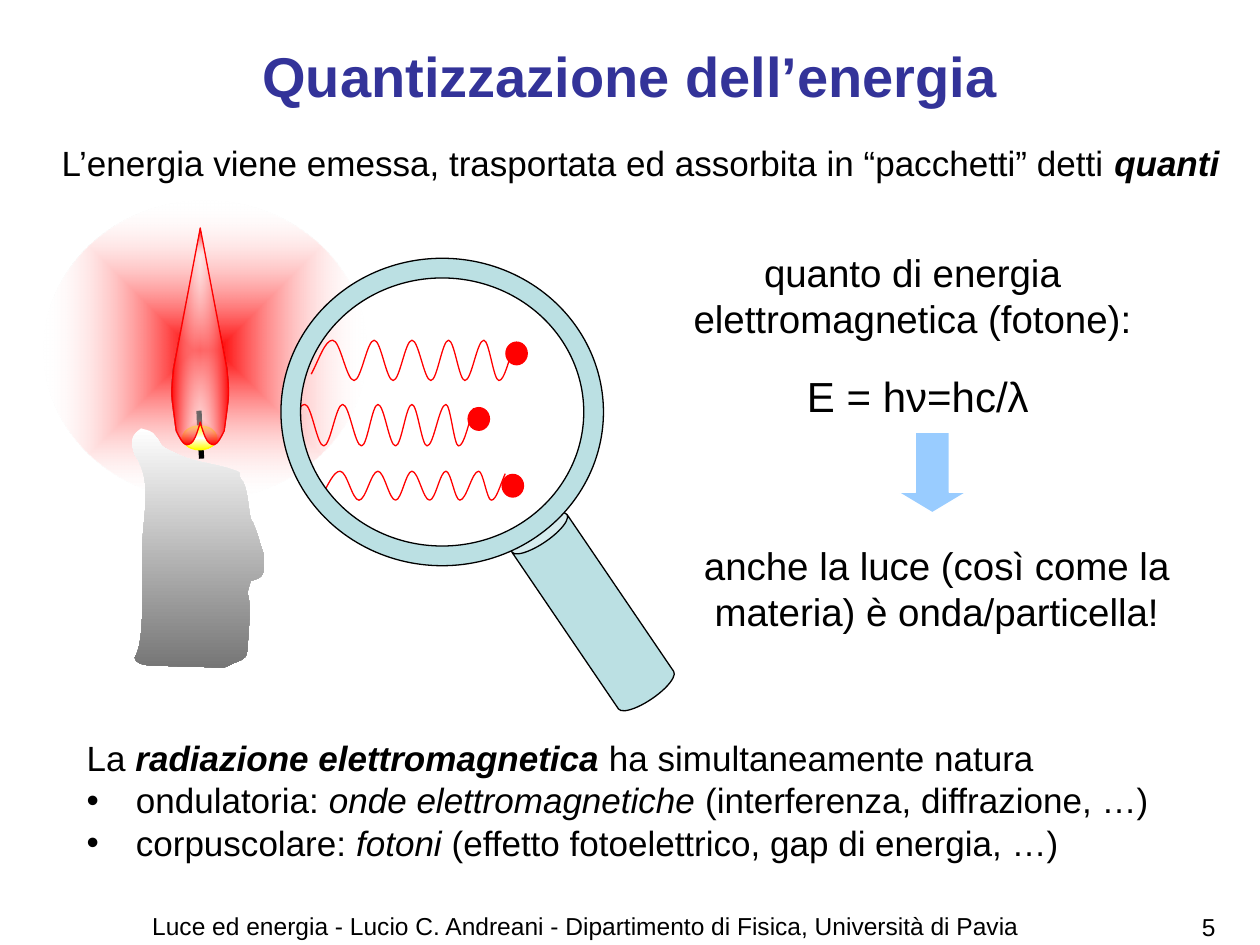
from pptx import Presentation
from pptx.dml.color import RGBColor
from pptx.enum.shapes import MSO_SHAPE
from pptx.enum.text import MSO_ANCHOR, PP_ALIGN
from pptx.oxml import parse_xml
from pptx.oxml.ns import nsdecls, qn
from pptx.oxml.xmlchemy import OxmlElement
from pptx.util import Pt

PX = 9144  # EMU per px, 100 px to the inch

BLACK = RGBColor(0x00, 0x00, 0x00)
WHITE = RGBColor(0xFF, 0xFF, 0xFF)
RED = RGBColor(0xFF, 0x00, 0x00)
YELLOW = RGBColor(0xFF, 0xFF, 0x00)
GRAY = RGBColor(0x76, 0x76, 0x76)
TEAL = RGBColor(0xBB, 0xE0, 0xE3)
SKY = RGBColor(0x99, 0xCC, 0xFF)
INDIGO = RGBColor(0x33, 0x33, 0x99)

RADIAL = ('<a:path path="shape"><a:fillToRect l="50000" t="50000" '
          'r="50000" b="50000"/></a:path>')
DOWNWARD = '<a:lin ang="5400000" scaled="0"/>'


class SlideBuilder:
    font = "Arial"

    def __init__(self, prs):
        self.s = prs.slides.add_slide(prs.slide_layouts[6])

    def paint(self, sp, fill=None, line=None, width=0.75):
        sp.shadow.inherit = False
        if fill is None:
            sp.fill.background()
        else:
            sp.fill.solid()
            sp.fill.fore_color.rgb = fill
        if line is None:
            sp.line.fill.background()
        else:
            sp.line.color.rgb = line
            sp.line.width = Pt(width)
        return sp

    def gradient(self, sp, start, end, direction, start_alpha=100, end_alpha=100):
        """Replace the fill by two stops; alpha is in percent."""
        stops = "".join(
            f'<a:gs pos="{pos}"><a:srgbClr val="{color}">'
            f'<a:alpha val="{alpha * 1000}"/></a:srgbClr></a:gs>'
            for pos, color, alpha in ((0, start, start_alpha), (100000, end, end_alpha)))
        sp.fill.gradient()
        old = sp.element.spPr.find(qn("a:gradFill"))
        old.getparent().replace(old, parse_xml(
            f'<a:gradFill rotWithShape="1" {nsdecls("a")}>'
            f'<a:gsLst>{stops}</a:gsLst>{direction}</a:gradFill>'))

    def shape(self, kind, x, y, w, h, fill=None, line=None, adj=(), rotation=0):
        sp = self.s.shapes.add_shape(kind, x * PX, y * PX, w * PX, h * PX)
        for i, value in enumerate(adj):
            sp.adjustments[i] = value
        sp.rotation = rotation
        return self.paint(sp, fill, line)

    def curve(self, points, line=None, width=0.75, closed=False):
        """Cubic curve: a start point, then three points for each segment."""
        emu = [(round(x * PX), round(y * PX)) for x, y in points]
        fb = self.s.shapes.build_freeform(*emu[0], scale=1.0)
        fb.add_line_segments(emu[1:], close=closed)
        sp = fb.convert_to_shape()
        steps = list(sp.element.iter(qn("a:lnTo")))
        for i in range(0, len(steps), 3):
            cubic = OxmlElement("a:cubicBezTo")
            steps[i].addprevious(cubic)
            for step in steps[i:i + 3]:
                cubic.append(step[0])
                step.getparent().remove(step)
        return self.paint(sp, None, line, width)

    def wave(self, start, xs, top, bottom, end):
        """Red wave through alternate crests and troughs at xs."""
        turns = [(x, bottom if i % 2 else top) for i, x in enumerate(xs)]
        knots = [start, *turns, end]
        points = [start]
        for i, ((x0, y0), (x1, y1)) in enumerate(zip(knots, knots[1:])):
            dx, dy = 0.36 * (x1 - x0), 0.43 * (y1 - y0)
            points += [(x0 + dx, y0 + dy * (i == 0)),
                       (x1 - dx, y1 - dy * (i == len(knots) - 2)), (x1, y1)]
        self.curve(points, RED)

    def text(self, x, y, w, h, paragraphs, size, color=BLACK,
             align=PP_ALIGN.LEFT, anchor=MSO_ANCHOR.TOP):
        """Each paragraph is a list of (text, style), style using b and i."""
        tf = self.s.shapes.add_textbox(x * PX, y * PX, w * PX, h * PX).text_frame
        tf.word_wrap = True
        tf.vertical_anchor = anchor
        for n, runs in enumerate(paragraphs):
            p = tf.add_paragraph() if n else tf.paragraphs[0]
            p.alignment = align
            for words, style in runs:
                r = p.add_run()
                r.text = words
                r.font.name, r.font.size = self.font, Pt(size)
                r.font.color.rgb = color
                r.font.bold, r.font.italic = "b" in style, "i" in style
        return tf

    def bullet(self, p, indent):
        pPr = p._p.get_or_add_pPr()
        pPr.set("marL", str(indent * PX))
        pPr.set("indent", str(-indent * PX))
        pPr.append(parse_xml(f'<a:buFont {nsdecls("a")} typeface="{self.font}"/>'))
        pPr.append(parse_xml(f'<a:buChar {nsdecls("a")} char="•"/>'))


CANDLE = [
    (107, 522), (116, 508), (112, 457), (113, 436), (113, 410), (122, 382), (107, 361),
    (104, 352), (103, 346), (112, 340), (118, 342), (120, 341), (124, 347),
    (126, 348), (126, 351), (128, 353), (130, 356), (138, 359), (142, 361),
    (157, 368), (175, 368), (190, 375), (190, 377), (190, 379), (191, 380),
    (192, 382), (194, 383), (194, 385), (197, 393), (197, 403), (199, 412),
    (200, 414), (202, 416), (202, 418), (205, 425), (205, 427), (207, 433),
    (208, 436), (210, 442), (210, 442), (209, 455), (211, 458), (199, 461),
    (192, 484), (202, 453), (196, 518), (196, 523), (189, 525), (186, 526),
    (183, 528), (177, 530), (177, 530), (157, 529), (138, 529), (118, 528),
    (114, 528), (107, 526), (107, 522)]

# Right half of the flame, from the notch at the wick up to the tip
FLAME_AXIS = 159
FLAME_HALF = [
    (159, 335), (160, 339), (162, 345), (163, 347), (165, 352), (168, 353), (170, 353),
    (173, 352), (175, 348), (178, 342), (179, 335), (180, 327), (181, 319),
    (182, 310), (181, 301), (180, 292), (173, 255), (166, 218), (159, 181)]
FLAME = FLAME_HALF + [(2 * FLAME_AXIS - x, y) for x, y in FLAME_HALF[-2::-1]]

WAVES = [
    ((247, 297), (264, 281, 297, 312, 327, 342, 356, 369, 384, 396), 270, 302, (408, 274)),
    ((226, 349), (242, 257, 272, 287, 300, 314, 327, 339, 354, 364), 321, 354, (376, 324)),
    ((255, 394), (270, 285, 300, 314, 327, 341, 354, 365, 380, 390), 374, 397, (401, 376))]


def main():
    prs = Presentation()
    prs.slide_width, prs.slide_height = 1000 * PX, 750 * PX
    b = SlideBuilder(prs)

    # Candle with glow and flame
    glow = b.shape(MSO_SHAPE.OVAL, 35, 159, 256, 237)
    b.gradient(glow, RED, WHITE, RADIAL, end_alpha=0)
    b.curve([(160, 364), (159, 348), (158, 331), (158, 326)], BLACK, 3)
    b.gradient(b.curve(CANDLE, closed=True), WHITE, GRAY, DOWNWARD)
    ember = b.shape(MSO_SHAPE.OVAL, 145, 338, 27, 19, line=YELLOW)
    b.gradient(ember, WHITE, YELLOW, RADIAL)
    flame = b.curve(FLAME, RED, closed=True)
    b.gradient(flame, WHITE, RED, RADIAL, start_alpha=39)

    # Magnifying glass with photons
    b.shape(MSO_SHAPE.CAN, 444, 402, 53, 167, TEAL, BLACK, [0.31], 325.8)
    for x, y in ((401, 271), (371, 323), (398, 376)):
        b.shape(MSO_SHAPE.OVAL, x, y, 18, 19, RED)
    for wave in WAVES:
        b.wave(*wave)
    b.shape(MSO_SHAPE.DONUT, 223, 205, 256, 244, TEAL, BLACK, [0.064])

    # Photon energy and its consequence
    b.text(500, 193, 457, 110, [[("quanto di energia ", "")],
                                [("elettromagnetica (fotone): ", "")]],
           22, align=PP_ALIGN.CENTER)
    b.text(500, 289, 457, 50, [[("E = hν=hc/λ", "")]], 24, align=PP_ALIGN.CENTER)
    b.shape(MSO_SHAPE.DOWN_ARROW, 713, 343, 54, 64, SKY, WHITE, [0.5, 0.3])
    b.text(531, 425, 425, 83,
           [[("anche la luce (così come la materia) è onda/particella!", "")]],
           22, align=PP_ALIGN.CENTER)

    # Title and opening sentence
    b.text(50, 13, 900, 93, [[("Quantizzazione dell’energia", "b")]], 32, INDIGO,
           PP_ALIGN.CENTER, MSO_ANCHOR.MIDDLE)
    b.text(39, 107, 949, 43, [[
        ("L’energia viene emessa, trasportata ed assorbita in “pacchetti” detti ", ""),
        ("quanti", "bi")]], 20)

    # Dual nature of radiation
    tf = b.text(59, 580, 866, 110, [
        [("La ", ""), ("radiazione elettromagnetica", "bi"),
         (" ha simultaneamente natura", "")],
        [("ondulatoria: ", ""), ("onde elettromagnetiche", "i"),
         (" (interferenza, diffrazione, …)", "")],
        [("corpuscolare: ", ""), ("fotoni", "i"),
         (" (effetto fotoelettrico, gap di energia, …)", "")]], 20)
    for p in tf.paragraphs[1:]:
        b.bullet(p, 39)

    # Footer and page number
    b.text(20, 718, 890, 32, [[("Luce ed energia - Lucio C. Andreani - "
                                "Dipartimento di Fisica, Università di Pavia", "")]],
           14, align=PP_ALIGN.CENTER)
    b.text(932, 719, 48, 31, [[("5 ", "")]], 14, align=PP_ALIGN.RIGHT)

    prs.save("out.pptx")


if __name__ == "__main__":
    main()
